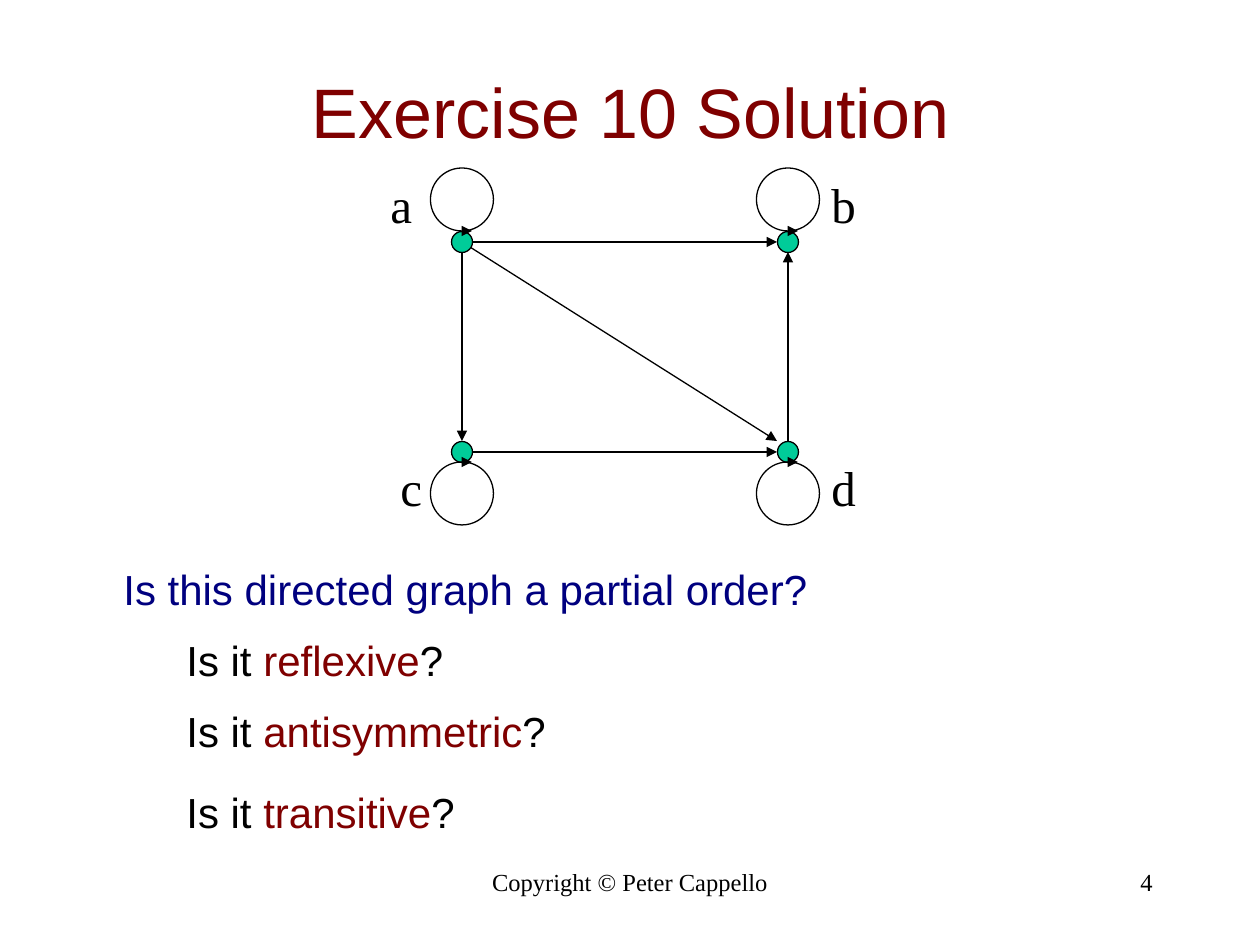
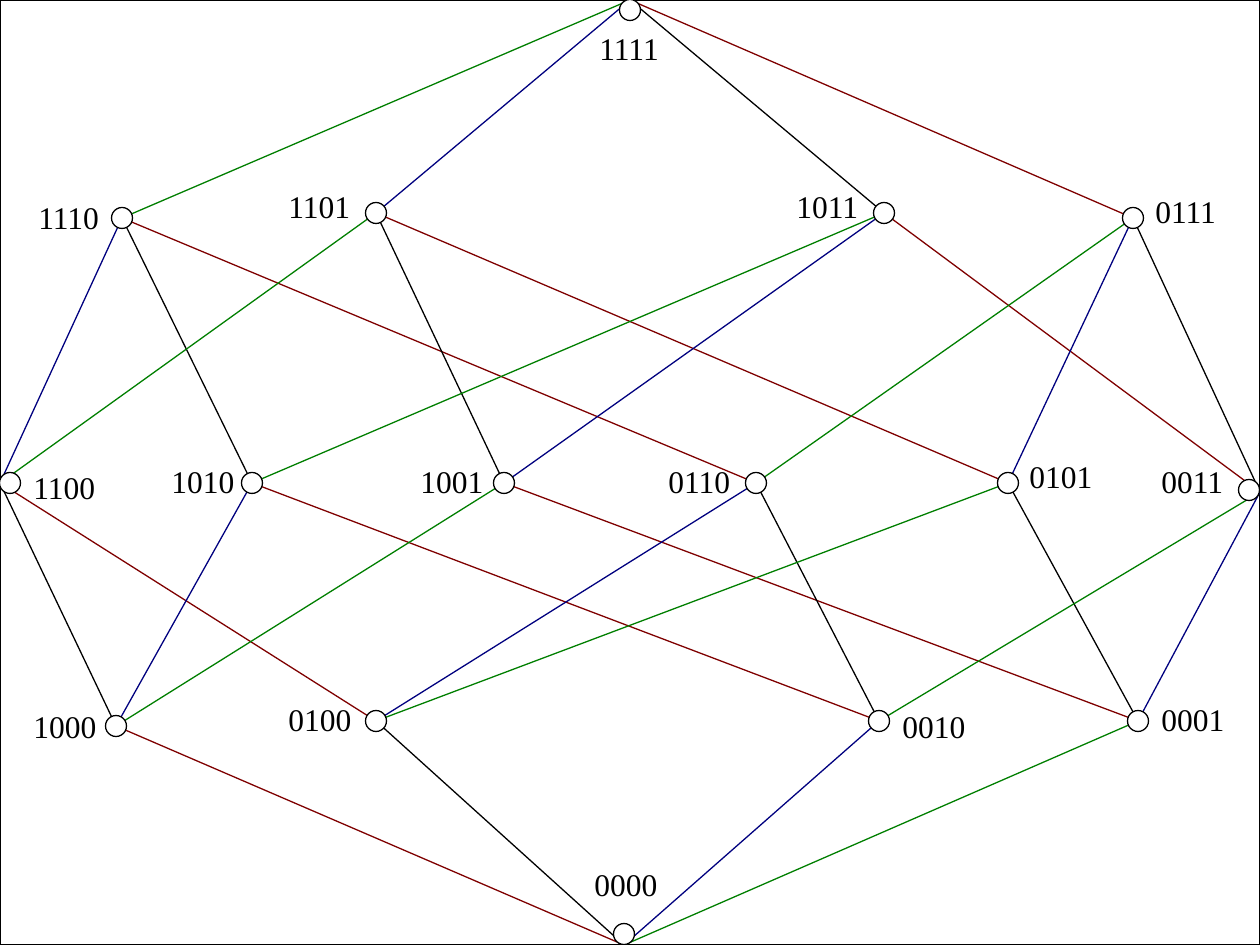
from itertools import combinations

from lxml import etree
from pptx import Presentation
from pptx.dml.color import RGBColor
from pptx.enum.shapes import MSO_CONNECTOR, MSO_SHAPE
from pptx.enum.text import MSO_ANCHOR, PP_ALIGN
from pptx.oxml.ns import qn
from pptx.util import Pt

LINE, OVAL, RECT = MSO_CONNECTOR.STRAIGHT, MSO_SHAPE.OVAL, MSO_SHAPE.RECTANGLE
LEFT, MID, RIGHT = PP_ALIGN.LEFT, PP_ALIGN.CENTER, PP_ALIGN.RIGHT
TOP, MIDDLE = MSO_ANCHOR.TOP, MSO_ANCHOR.MIDDLE

PX = 914400 / 126
BLACK, WHITE, RED, BLUE, GREEN, TEAL = (
    "000000", "FFFFFF", "7F0000", "00007F", "007F00", "00CC99")
SERIF, SANS = "Times New Roman", "Arial"
DOT = 21


def draw(slide, kind, *box, fill=None, ink=BLACK, arrow=False):
    """Box is x1, y1, x2, y2 for a line, else left, top, width, height."""
    box = [round(v * PX) for v in box]
    if kind is LINE:
        item = slide.shapes.add_connector(kind, *box)
        etree.SubElement(item._element.spPr, qn("a:effectLst"))
    else:
        item = slide.shapes.add_shape(kind, *box)
        item.shadow.inherit = False
        if fill:
            item.fill.solid()
            item.fill.fore_color.rgb = RGBColor.from_string(fill)
        else:
            item.fill.background()
    item.line.color.rgb = RGBColor.from_string(ink)
    item.line.width = Pt(0.75)
    if arrow:
        etree.SubElement(item.line._get_or_add_ln(), qn("a:tailEnd"), type="triangle")


def text(slide, box, *paras, size=18, font=SERIF, color=BLACK, align=LEFT,
         anchor=TOP, wrap=True, pitch=None, gaps=None, margins=None):
    """Each paragraph is a string or a list of (string, colour) runs."""
    item = slide.shapes.add_textbox(*[round(v * PX) for v in box])
    frame = item.text_frame
    frame.word_wrap = wrap
    frame.vertical_anchor = anchor
    for i, runs in enumerate(paras):
        para = frame.paragraphs[0] if i == 0 else frame.add_paragraph()
        para.alignment = align
        if pitch:
            para.line_spacing = pitch
        if gaps:
            para.space_before = Pt(gaps[i])
        if margins:
            para._p.get_or_add_pPr().set("marL", str(round(margins[i] * PX)))
        for words, ink in [(runs, color)] if isinstance(runs, str) else runs:
            run = para.add_run()
            run.text = words
            run.font.size = Pt(size)
            run.font.name = font
            run.font.color.rgb = RGBColor.from_string(ink)


deck = Presentation()
deck.slide_width, deck.slide_height = round(1260 * PX), round(945 * PX)
blank = deck.slide_layouts[6]

# Exercise 10: a directed graph on four vertices
slide = deck.slides.add_slide(blank)
text(slide, (430, 861, 400, 63), "Copyright © Peter Cappello", size=14, align=MID)
text(slide, (903, 861, 262, 63), "4", size=14, align=RIGHT)
text(slide, (95, 32, 1071, 157), "Exercise 10 Solution", size=40, font=SANS,
     color=RED, align=MID, anchor=MIDDLE)

asks = [[("Is it ", BLACK), (word, RED), ("?", BLACK)]
        for word in ("reflexive", "antisymmetric", "transitive")]
text(slide, (111, 547, 1032, 301),
     [("Is this directed graph a partial order?", BLUE)], *asks,
     size=24, font=SANS, pitch=1.2, gaps=(6, 6, 6, 12), margins=(0, 63, 63, 63))

west, east, north, south = 462, 788, 242, 452
for edge in (
    (west, north, 777, 441),
    (west, south, 777, south),
    (west, north, 777, north),
    (west, 252, west, 441),
    (east, 441, east, 252),
):
    draw(slide, LINE, *edge, arrow=True)

for name, x, y, loop, tip, spot in (
    ("a", west, north, 168, 231, (378, 168)),
    ("b", east, north, 168, 231, (819, 168)),
    ("c", west, south, 462, 462, (388, 451)),
    ("d", east, south, 462, 462, (819, 451)),
):
    draw(slide, OVAL, x - DOT / 2, y - DOT / 2, DOT, DOT, fill=TEAL)
    draw(slide, OVAL, x - 31.5, loop, 63, 63)
    draw(slide, LINE, x, tip, x + 10, tip, arrow=True)
    text(slide, (*spot, 48, 72), name, size=28, wrap=False)

# Lattice of four-bit words
slide = deck.slides.add_slide(blank)
draw(slide, RECT, 0, 0, 1260, 945, fill=WHITE)

# word: dot centre, label corner
nodes = {
    "1111": (630, 10, 587, 23),
    "1110": (122, 218, 26, 192),
    "1101": (376, 213, 276, 181),
    "1011": (884, 213, 784, 181),
    "0111": (1133, 218, 1143, 186),
    "1100": (10, 483, 21, 462),
    "1010": (252, 483, 159, 456),
    "1001": (504, 483, 408, 456),
    "0110": (756, 483, 656, 456),
    "0101": (1008, 483, 1017, 451),
    "0011": (1249, 490, 1149, 456),
    "1000": (116, 726, 21, 701),
    "0100": (376, 721, 276, 694),
    "0010": (879, 721, 890, 701),
    "0001": (1138, 721, 1149, 694),
    "0000": (624, 934, 582, 859),
}
# Edges of the outer words end on the slide border
ends = {word: spot[:2] for word, spot in nodes.items()}
ends.update({"1111": (630, 0), "1100": (0, 483), "0011": (1260, 492), "0000": (624, 945)})

# Words that differ in one bit are joined; the bit sets the colour
for one, two in combinations(nodes, 2):
    bits = [i for i in range(4) if one[i] != two[i]]
    if len(bits) == 1:
        draw(slide, LINE, *ends[one], *ends[two],
             ink=(RED, BLACK, BLUE, GREEN)[bits[0]])

for word, (x, y, left, top) in nodes.items():
    draw(slide, OVAL, x - DOT / 2, y - DOT / 2, DOT, DOT, fill=WHITE)
    text(slide, (left, top, 88, 50), word, wrap=False)

deck.save("out.pptx")
